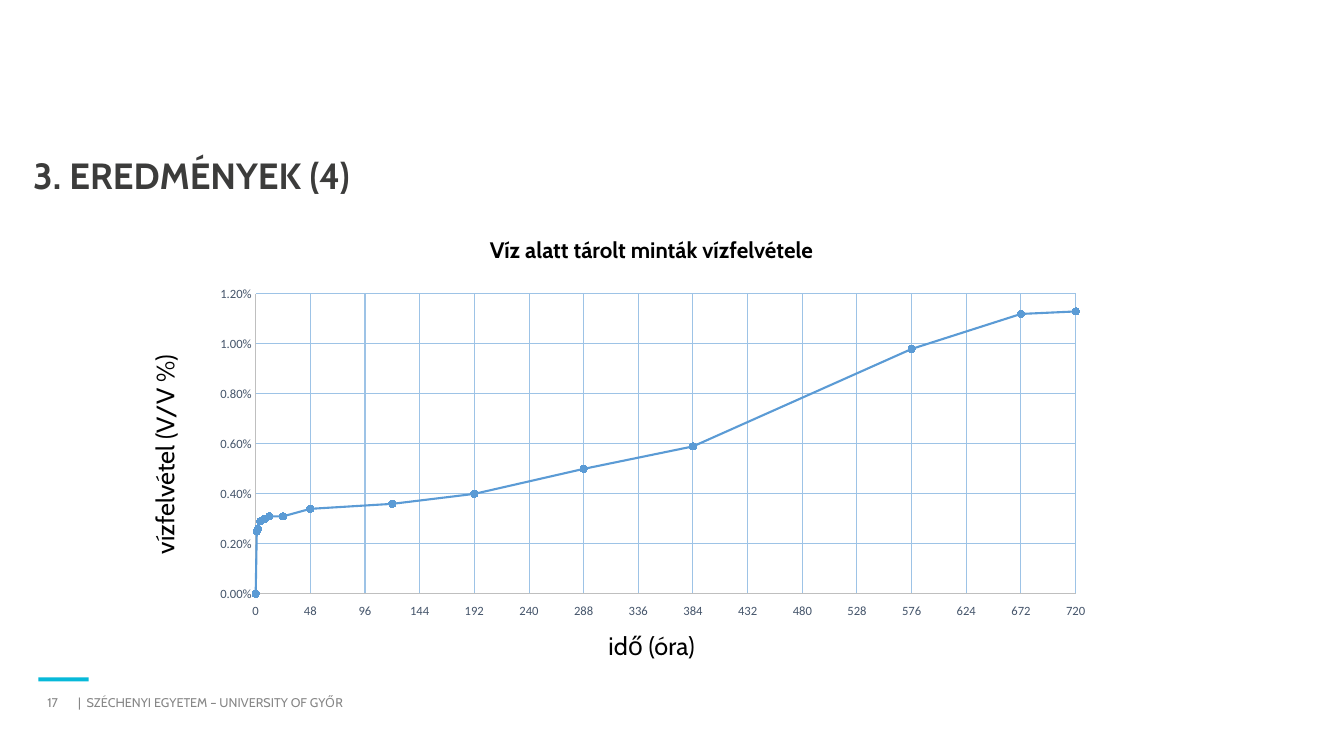
from lxml import etree
from pptx import Presentation
from pptx.chart.data import XyChartData
from pptx.dml.color import RGBColor
from pptx.enum.chart import XL_CHART_TYPE, XL_MARKER_STYLE, XL_TICK_LABEL_POSITION, XL_TICK_MARK
from pptx.enum.shapes import MSO_SHAPE
from pptx.enum.text import PP_ALIGN
from pptx.oxml.ns import qn
from pptx.util import Inches, Pt

LEFT, CENTER = PP_ALIGN.LEFT, PP_ALIGN.CENTER
SCATTER_LINES = XL_CHART_TYPE.XY_SCATTER_LINES
CIRCLE = XL_MARKER_STYLE.CIRCLE
NO_TICK = XL_TICK_MARK.NONE
LABELS_LOW = XL_TICK_LABEL_POSITION.LOW
RECTANGLE = MSO_SHAPE.RECTANGLE

WIDTH, HEIGHT = Inches(13.33), Inches(7.5)
TEXT_FONT, CHART_FONT = "Cabin", "Calibri"
COLORS = {
    "accent": "07B9D9",
    "footer": "868686",
    "heading": "3C3C3B",
    "label": "000000",
    "axis_text": "44546A",
    "axis_line": "BFBFBF",
    "grid": "9DC3E6",
    "series": "5B9BD5",
}
HOURS = [0, 1, 2, 4, 8, 12, 24, 48, 120, 192, 288, 384, 576, 672, 720]
WATER_UPTAKE = [0, 0.0025, 0.0026, 0.0029, 0.003, 0.0031, 0.0031, 0.0034,
                0.0036, 0.004, 0.005, 0.0059, 0.0098, 0.0112, 0.0113]
PLOT_AREA = {"x": 0.06, "y": 0.04, "w": 0.91, "h": 0.87}


def color(name):
    return RGBColor.from_string(COLORS[name])


def place(left, top, width, height):
    return (round(WIDTH * left / 100), round(HEIGHT * top / 100),
            round(WIDTH * width / 100), round(HEIGHT * height / 100))


def add_text(slide, area, text, size, color_name, align=LEFT, bold=False,
             wrap=True, rotation=0):
    shape = slide.shapes.add_textbox(*place(*area))
    shape.rotation = rotation
    shape.text_frame.word_wrap = wrap
    shape.text_frame.text = text
    paragraph = shape.text_frame.paragraphs[0]
    paragraph.alignment = align
    font = paragraph.runs[0].font
    font.name, font.size, font.bold = TEXT_FONT, Pt(size), bold
    font.color.rgb = color(color_name)
    return paragraph


def add_bar(slide, area):
    bar = slide.shapes.add_shape(RECTANGLE, *place(*area))
    bar.shadow.inherit = False
    bar.fill.solid()
    bar.fill.fore_color.rgb = color("accent")
    bar.line.fill.background()


def style_line(line, color_name, width):
    line.color.rgb = color(color_name)
    line.width = Pt(width)


def style_font(font, size, color_name):
    font.name, font.size = CHART_FONT, Pt(size)
    font.color.rgb = color(color_name)


def style_axis(axis, maximum, step, number_format):
    axis.minimum_scale, axis.maximum_scale, axis.major_unit = 0, maximum, step
    axis.has_title = False
    axis.has_major_gridlines = True
    axis.major_tick_mark = axis.minor_tick_mark = NO_TICK
    axis.tick_labels.number_format = number_format
    axis.tick_labels.number_format_is_linked = False
    style_font(axis.tick_labels.font, 9, "axis_text")
    style_line(axis.format.line, "axis_line", 0.75)
    style_line(axis.major_gridlines.format.line, "grid", 0.75)


def fix_plot_area(chart):
    plot_area = chart.plots[0]._element.getparent()
    for old_layout in plot_area.findall(qn("c:layout")):
        plot_area.remove(old_layout)
    layout = etree.Element(qn("c:layout"))
    plot_area.insert(0, layout)
    manual = etree.SubElement(layout, qn("c:manualLayout"))
    settings = [("layoutTarget", "inner"), ("xMode", "edge"), ("yMode", "edge")]
    for tag, value in settings + list(PLOT_AREA.items()):
        etree.SubElement(manual, qn(f"c:{tag}")).set("val", str(value))


def add_uptake_chart(slide, area):
    data = XyChartData(number_format="0.00%")
    points = data.add_series("Series 1")
    for hour, uptake in zip(HOURS, WATER_UPTAKE):
        points.add_data_point(hour, uptake)
    chart = slide.shapes.add_chart(SCATTER_LINES, *place(*area), data).chart
    chart.has_title = chart.has_legend = False
    style_font(chart.font, 10, "label")
    chart.plots[0].vary_by_categories = False
    style_axis(chart.category_axis, 720, 48, "0")
    style_axis(chart.value_axis, 0.012, 0.002, "0.00%")
    chart.category_axis.tick_label_position = LABELS_LOW
    fix_plot_area(chart)

    series = chart.plots[0].series[0]
    series.smooth = False
    style_line(series.format.line, "series", 1.5)
    marker = series.marker
    marker.style, marker.size = CIRCLE, 5
    marker.format.fill.solid()
    marker.format.fill.fore_color.rgb = color("series")
    style_line(marker.format.line, "series", 0.75)


def main():
    presentation = Presentation()
    presentation.slide_width, presentation.slide_height = WIDTH, HEIGHT
    slide = presentation.slides.add_slide(presentation.slide_layouts[6])

    add_bar(slide, (2.85, 89.6, 3.75, 0.53))
    add_text(slide, (4.65, 91.33, 22.87, 3.33),
             "\u00a0 |\u00a0 SZÉCHENYI EGYETEM – UNIVERSITY OF GYŐR".replace("\u00a0", " "),
             9, "footer", wrap=False)
    add_text(slide, (2.78, 91.33, 2.92, 3.33), "17", 9, "footer", wrap=False)

    add_uptake_chart(slide, (15, 37.07, 67.05, 45.6))

    heading = add_text(slide, (1.73, 20.27, 93.6, 12), "3. EREDMÉNYEK (4)",
                       26, "heading", bold=True)
    heading.line_spacing = 0.9
    add_text(slide, (38.7, 82.67, 19.57, 5.33), "idő (óra)", 18, "label", CENTER)
    add_text(slide, (-0.6, 57.47, 25.65, 5.33), "vízfelvétel (V/V %)",
             18, "label", CENTER, rotation=270)
    add_text(slide, (27.07, 30.53, 42.82, 4.93),
             "Víz alatt tárolt minták vízfelvétele", 16, "label", CENTER, bold=True)

    presentation.save("out.pptx")


if __name__ == "__main__":
    main()
